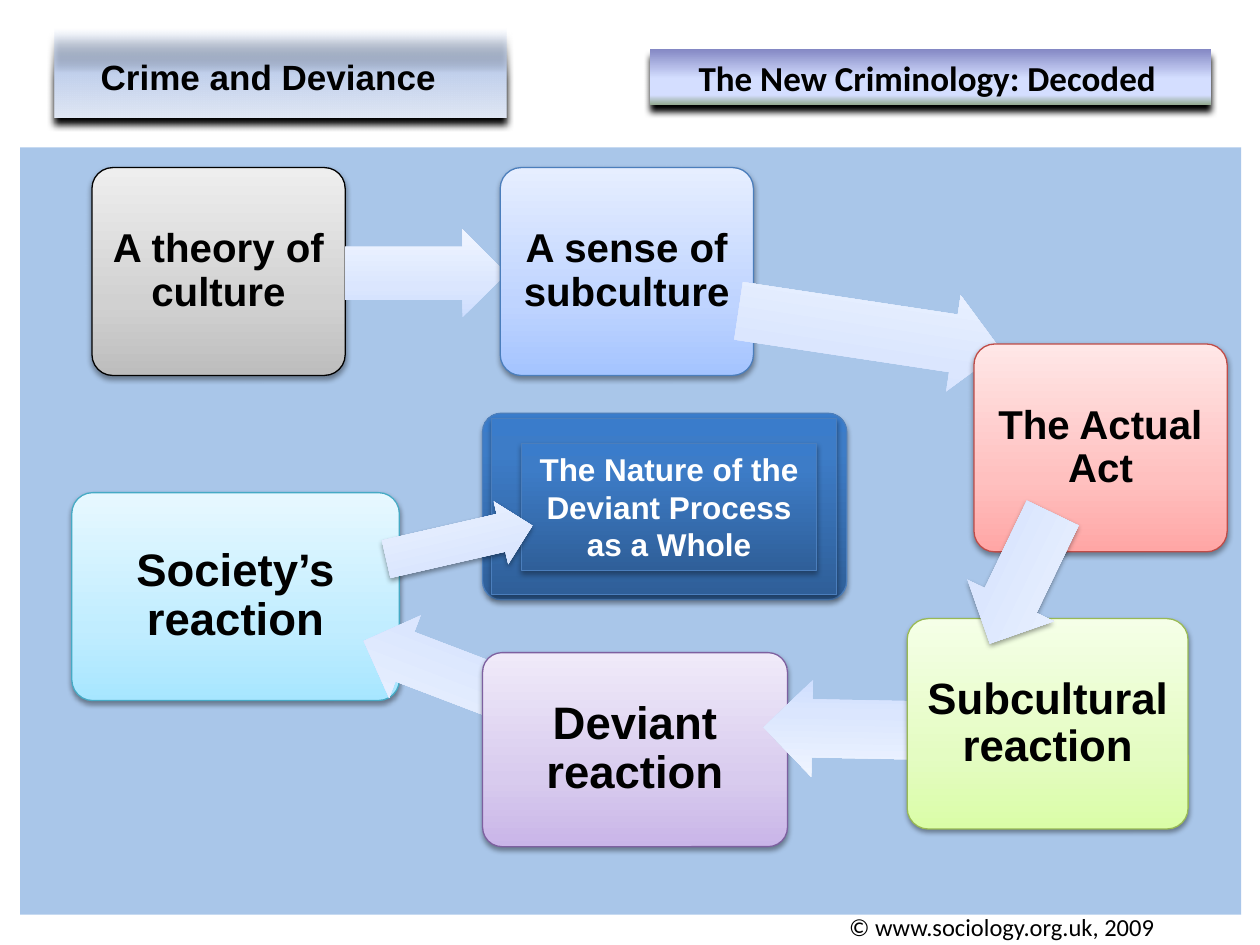
from dataclasses import dataclass

from pptx import Presentation
from pptx.dml.color import RGBColor
from pptx.enum.shapes import MSO_SHAPE as Preset
from pptx.enum.text import MSO_ANCHOR as Anchor, MSO_AUTO_SIZE as AutoSize, PP_ALIGN as Align
from pptx.oxml import parse_xml
from pptx.oxml.ns import nsdecls, qn
from pptx.util import Inches, Pt


@dataclass
class Area:
    left: float
    top: float
    width: float
    height: float

    def lengths(self) -> list:
        return [Inches(n) for n in (self.left, self.top, self.width, self.height)]


@dataclass
class Stop:
    position: int
    color: str
    alpha: int = 100


@dataclass
class Shadow:
    alpha: int
    blur: float
    distance: float


@dataclass
class Card:
    text: str
    area: Area
    colors: tuple
    line: str
    size: int = 23


@dataclass
class Arrow:
    area: Area
    rotation: float = 0
    shadow: Shadow | None = None


UP, DOWN = 270, 90
BANNER_SHADOW = Shadow(100, 4, 4)
SOFT_SHADOW = Shadow(38, 3.1, 1.6)
PLATE_SHADOW = Shadow(35, 3.1, 1.8)
ARROW_STOPS = [Stop(0, "CDDDFE"), Stop(35, "DBE6FE"), Stop(100, "F0F5FF")]
PLATE_STOPS = [Stop(0, "2F5F99"), Stop(80, "3D7CC7"), Stop(100, "3A7CCB")]
TITLE_STOPS = [Stop(0, "8488C4"), Stop(53, "D4DEFF"), Stop(83, "D4DEFF"), Stop(100, "96AB94")]
TOPIC_STOPS = [Stop(0, "9AB5E4", 0), Stop(50, "C2D1ED"), Stop(100, "E1E8F5")]

FLOW = [
    Card("A theory of culture", Area(0.73, 1.33, 2.01, 1.65), ("BDBDBD", "D1D1D1", "EEEEEE"), "000000"),
    Arrow(Area(2.74, 1.82, 1.28, 0.7)),
    Card("A sense of subculture", Area(3.97, 1.33, 2.01, 1.65), ("A4C4FF", "BFD4FF", "E6EEFF"), "4B7EBC"),
    Arrow(Area(5.85, 2.24, 2.11, 0.77), 8.6),
    Card("The Actual Act", Area(7.73, 2.73, 2.01, 1.65), ("FFA6A5", "FFC0BF", "FFE7E7"), "BF4C48"),
    Card("Society’s reaction", Area(0.57, 3.91, 2.6, 1.65), ("A7E6FF", "C1EDFF", "E7F8FF"), "46AAC5", 26),
    Arrow(Area(2.84, 4.99, 1.42, 0.7), 200.9),
    Card("Deviant reaction", Area(3.83, 5.18, 2.42, 1.54), ("C9B5E8", "D8CBEE", "F0EAF9"), "7D60A0", 26),
    Arrow(Area(6.06, 5.4, 1.28, 0.77), 181.1),
    Card("Subcultural reaction", Area(7.2, 4.91, 2.23, 1.67), ("DAFDA7", "E4FCC2", "F5FFE7"), "98B955", 25),
]
FRONT_ARROWS = [
    Arrow(Area(7.53, 4.21, 1.15, 0.76), 115.7, SOFT_SHADOW),
    Arrow(Area(3.05, 4.05, 1.19, 0.51), 347.1, SOFT_SHADOW),
]


def rgb(color: str) -> RGBColor:
    return RGBColor.from_string(color)


def add_block(page, preset, area: Area, line: str | None = None, shadow: Shadow | None = None):
    shape = page.shapes.add_shape(preset, *area.lengths())
    shape.shadow.inherit = False
    shape.fill.solid()
    if line:
        shape.line.color.rgb = rgb(line)
        shape.line.width = Pt(0.75)
    else:
        shape.line.fill.background()
    if shadow:
        shape.element.spPr.find(qn("a:effectLst")).append(parse_xml(
            f'<a:outerShdw {nsdecls("a")} blurRad="{Pt(shadow.blur)}" dist="{Pt(shadow.distance)}" '
            f'dir="5400000" rotWithShape="0"><a:srgbClr val="000000">'
            f'<a:alpha val="{shadow.alpha * 1000}"/></a:srgbClr></a:outerShdw>'))
    return shape


def fill_gradient(shape, stops: list[Stop], angle: int) -> None:
    marks = "".join(
        f'<a:gs pos="{stop.position * 1000}"><a:srgbClr val="{stop.color}">'
        f'<a:alpha val="{stop.alpha * 1000}"/></a:srgbClr></a:gs>' for stop in stops)
    properties = shape.element.spPr
    properties.replace(properties.find(qn("a:solidFill")), parse_xml(
        f'<a:gradFill {nsdecls("a")} rotWithShape="1"><a:gsLst>{marks}</a:gsLst>'
        f'<a:lin ang="{angle * 60000}" scaled="0"/></a:gradFill>'))


def write_text(box, text: str, *, size: int, font: str = "Arial", color: str = "000000", bold: bool = True,
               align=Align.CENTER, anchor=Anchor.TOP, spacing: float = 1.0, margin: float | None = None) -> None:
    frame = box.text_frame
    frame.word_wrap = True
    frame.auto_size = AutoSize.NONE
    frame.vertical_anchor = anchor
    if margin is not None:
        frame.margin_left = frame.margin_right = Inches(margin)
        frame.margin_top = frame.margin_bottom = Inches(margin)
    para = frame.paragraphs[0]
    para.alignment = align
    para.line_spacing = spacing
    span = para.add_run()
    span.text = text
    span.font.name = font
    span.font.size = Pt(size)
    span.font.bold = bold
    span.font.color.rgb = rgb(color)


def add_card(page, card: Card) -> None:
    shape = add_block(page, Preset.ROUNDED_RECTANGLE, card.area, card.line, SOFT_SHADOW)
    shape.adjustments[0] = 0.1
    fill_gradient(shape, [Stop(*pair) for pair in zip((0, 35, 100), card.colors)], UP)
    write_text(shape, card.text, size=card.size, anchor=Anchor.MIDDLE, spacing=0.9, margin=0.09)


def add_arrow(page, arrow: Arrow) -> None:
    shape = add_block(page, Preset.RIGHT_ARROW, arrow.area, shadow=arrow.shadow)
    shape.adjustments[0] = 0.6
    shape.adjustments[1] = 0.5
    shape.rotation = arrow.rotation
    fill_gradient(shape, ARROW_STOPS, UP)


def add_plate(page, preset, area: Area):
    shape = add_block(page, preset, area, "4B7EBC", PLATE_SHADOW)
    fill_gradient(shape, PLATE_STOPS, UP)
    return shape


def add_backdrop(page) -> None:
    panel = add_block(page, Preset.RECTANGLE, Area(0.16, 1.17, 9.69, 6.09))
    panel.fill.fore_color.rgb = rgb("558ED5")
    tint = panel.element.spPr.find(qn("a:solidFill"))[0]
    tint.append(parse_xml(f'<a:alpha {nsdecls("a")} val="50000"/>'))
    for area, stops in ((Area(5.16, 0.39, 4.45, 0.44), TITLE_STOPS), (Area(0.43, 0.23, 3.59, 0.7), TOPIC_STOPS)):
        banner = add_block(page, Preset.RECTANGLE, area, shadow=BANNER_SHADOW)
        fill_gradient(banner, stops, DOWN)


def add_title(page) -> None:
    title = page.shapes.title
    title.left, title.top, title.width, title.height = Area(5.16, 0.4, 4.4, 0.44).lengths()
    write_text(title, "The New Criminology: Decoded", size=20, font="Calibri")
    title.element.getparent().append(title.element)


def add_center(page) -> None:
    frame = add_plate(page, Preset.ROUNDED_RECTANGLE, Area(3.83, 3.28, 2.89, 1.48))
    frame.adjustments[0] = 0.1
    add_plate(page, Preset.RECTANGLE, Area(3.9, 3.32, 2.74, 1.4))
    label = add_plate(page, Preset.RECTANGLE, Area(4.14, 3.52, 2.34, 1.01))
    write_text(label, "The Nature of the Deviant Process as a Whole", size=18, color="FFFFFF")


def main() -> None:
    deck = Presentation()
    deck.slide_width, deck.slide_height = Inches(10), Inches(7.5)
    page = deck.slides.add_slide(deck.slide_layouts[5])
    add_backdrop(page)
    add_title(page)
    for item in FLOW:
        if isinstance(item, Card):
            add_card(page, item)
        else:
            add_arrow(page, item)
    add_center(page)
    for arrow in FRONT_ARROWS:
        add_arrow(page, arrow)
    credit = page.shapes.add_textbox(*Area(6.64, 7.19, 3.36, 0.34).lengths())
    write_text(credit, "© www.sociology.org.uk, 2009", size=14, font="Calibri", bold=False, align=Align.LEFT)
    topic = page.shapes.add_textbox(*Area(0.43, 0.39, 3.4, 0.44).lengths())
    write_text(topic, "Crime and Deviance", size=20)
    deck.save("out.pptx")


if __name__ == "__main__":
    main()
